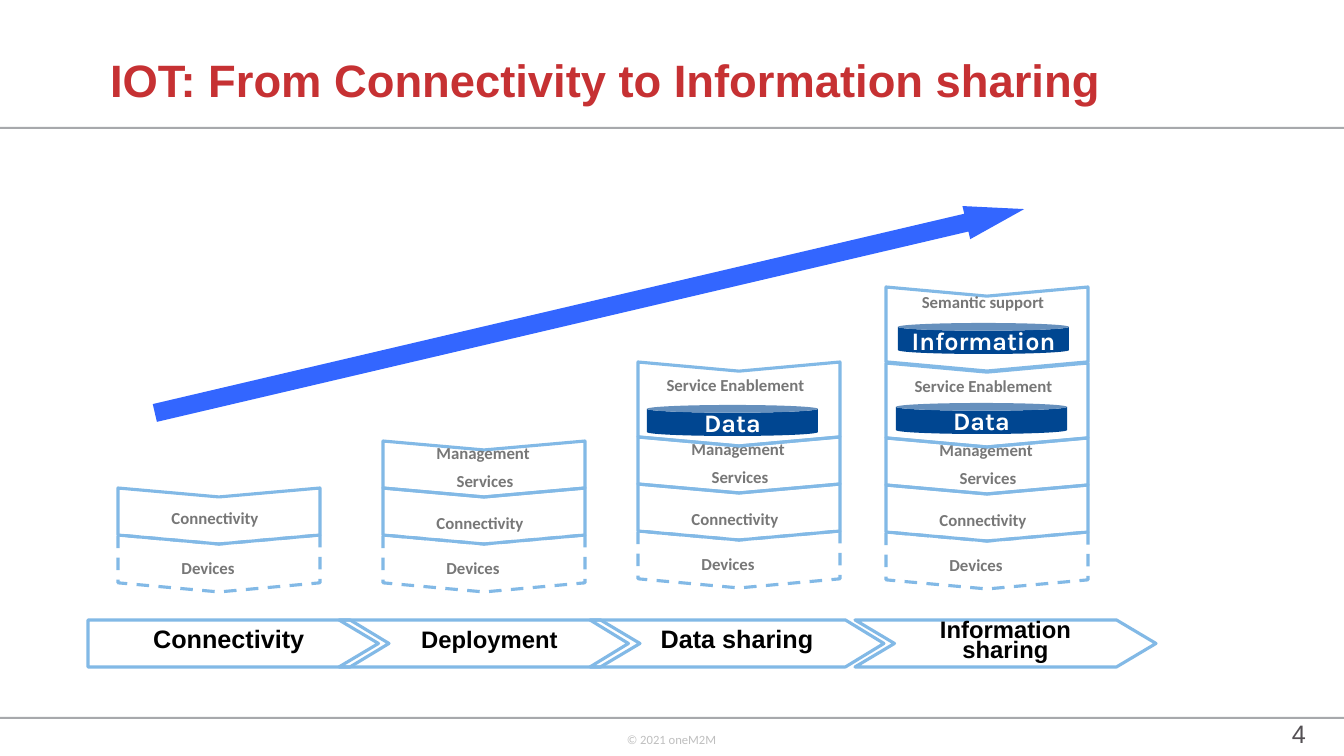
from dataclasses import dataclass

from pptx import Presentation
from pptx.dml.color import RGBColor
from pptx.enum.dml import MSO_LINE
from pptx.enum.shapes import MSO_SHAPE
from pptx.enum.text import MSO_ANCHOR, MSO_AUTO_SIZE, PP_ALIGN
from pptx.util import Emu, Pt

CHEVRON, PENTAGON = MSO_SHAPE.CHEVRON, MSO_SHAPE.PENTAGON
CAN, LEFT_ARROW, RECT = MSO_SHAPE.CAN, MSO_SHAPE.LEFT_ARROW, MSO_SHAPE.RECTANGLE
LEFT, CENTER = PP_ALIGN.LEFT, PP_ALIGN.CENTER
TOP, MIDDLE, BOTTOM = MSO_ANCHOR.TOP, MSO_ANCHOR.MIDDLE, MSO_ANCHOR.BOTTOM

# Content; every length is in px
SLIDE = (1344, 756)
TITLE = ("IOT: From Connectivity to Information sharing", (100, 39, 1022, 73))
RULES = [(0, 127, 1344, 2), (0, 717, 1344, 2)]
FOOTER = ("© 2021 oneM2M", (617, 727, 111, 40))
NUMBER = ("4", (1282, 713, 51, 40))
GROWTH_ARROW = (143, 294, 893, 34)

# Layers from the bottom up: lines, rise of the chevron above the base,
# chevron height, notch, label box relative to the stack's left and base
LAYERS = [
    (["Devices "], 0, 57, 0.16, (-33, 20, 250, 26)),
    (["Connectivity"], 47, 56, 0.16, (-1, -27, 196, 34)),
    (["Management ", "Services"], 94, 56, 0.16, (10, -84, 184, 32)),
    (["Service Enablement"], 169, 84, 0.109, (-27, -162, 249, 32)),
    (["Semantic support"], 245, 84, 0.109, (5, -246, 184, 32)),
]
STACK_W = 202
# Left, base, number of layers, shift of the Connectivity label
STACKS = [(118, 535, 2, -5), (383, 535, 3, 0), (638, 531, 4, 0), (886, 532, 5, 0)]
STORES = [("Data", 647, 405), ("Data", 896, 403), ("Information", 898, 323)]
STORE_SIZE = (171, 31)

# Text, preset, left, width, point, type size name
PHASES = [
    ("Connectivity", PENTAGON, 88, 301, 0.828, "phase"),
    ("Deployment", CHEVRON, 339, 301, 0.841, "phase_small"),
    ("Data sharing", CHEVRON, 590, 294, 0.82, "phase"),
    ("Information sharing", CHEVRON, 855, 301, 0.841, "phase_small"),
]
PHASE_TOP, PHASE_H = 620, 47


@dataclass(frozen=True)
class Theme:
    rule: str = "A7A9AC"
    outline: str = "82B9E6"
    arrow: str = "3366FF"
    store: str = "004691"
    line_width: float = 2.25
    # Font, size, colour, bold
    title: tuple = ("Arial", 32.4, "C63133", True)
    layer: tuple = ("Calibri", 12, "777777", True)
    data: tuple = ("Karla", 18, "FFFFFF", True)
    phase: tuple = ("Arial", 18, "000000", True)
    phase_small: tuple = ("Arial", 17, "000000", True)
    footer: tuple = ("Calibri", 9, "BFBFBF", False)
    number: tuple = ("Arial", 18, "545054", False)


THEME = Theme()
TIGHT = {"line_spacing": Pt(14), "space_after": Pt(3)}


def px(n):
    return Emu(round(n * 914400 / 100.8))


def write(sp, lines, style, align=CENTER, anchor=MIDDLE, wrap=True, **spacing):
    tf = sp.text_frame
    tf.auto_size = MSO_AUTO_SIZE.NONE
    tf.word_wrap, tf.vertical_anchor = wrap, anchor
    name, size, color, bold = getattr(THEME, style)
    for i, line in enumerate(lines):
        p = tf.add_paragraph() if i else tf.paragraphs[0]
        p.alignment = align
        for key, value in spacing.items():
            setattr(p, key, value)
        if i:
            p.space_before = Pt(3)
        r = p.add_run()
        r.text = line
        for key, value in {"name": name, "size": Pt(size), "bold": bold}.items():
            setattr(r.font, key, value)
        r.font.color.rgb = RGBColor.from_string(color)


def add_text(s, box, lines, style, **layout):
    write(s.shapes.add_textbox(*map(px, box)), lines, style, **layout)


def add_preset(s, preset, box, fill=None, adjust=(), rotation=0):
    """Add a filled shape, or an outlined one when no fill is given."""
    sp = s.shapes.add_shape(preset, *map(px, box))
    sp.shadow.inherit = False
    sp.rotation = rotation
    for i, value in enumerate(adjust):
        sp.adjustments[i] = value
    if fill:
        sp.fill.solid()
        sp.fill.fore_color.rgb = RGBColor.from_string(fill)
        sp.line.fill.background()
    else:
        sp.fill.background()
        sp.line.color.rgb = RGBColor.from_string(THEME.outline)
        sp.line.width = Pt(THEME.line_width)
    return sp


def add_stack(s, left, base, count, shift):
    for i, (lines, rise, h, notch, (dx, dy, w, label_h)) in enumerate(LAYERS[:count]):
        # A quarter turn about the centre swaps width and height
        turn = (STACK_W - h) / 2
        box = (left + turn, base - rise - turn, h, STACK_W)
        sp = add_preset(s, CHEVRON, box, adjust=[notch], rotation=90)
        if i == 0:
            sp.line.dash_style = MSO_LINE.DASH
        label = (left + dx, base + dy + (shift if i == 1 else 0), w, label_h)
        if i == 1:
            add_text(s, label, lines, "layer", anchor=TOP)
        else:
            add_text(s, label, lines, "layer", **TIGHT)


def main():
    prs = Presentation()
    prs.slide_width, prs.slide_height = map(px, SLIDE)
    s = prs.slides.add_slide(prs.slide_layouts[5])

    text, box = TITLE
    title = s.shapes.title
    title.left, title.top, title.width, title.height = map(px, box)
    write(title, [text], "title", align=LEFT, anchor=BOTTOM, line_spacing=0.9)

    for rule in RULES:
        add_preset(s, RECT, rule, THEME.rule)
    for (text, box), style in ((FOOTER, "footer"), (NUMBER, "number")):
        add_text(s, box, [text], style, align=LEFT, anchor=TOP)

    add_preset(s, LEFT_ARROW, GROWTH_ARROW, THEME.arrow, (0.537, 1.749), 166.8)
    for stack in STACKS:
        add_stack(s, *stack)
    for text, left, top in STORES:
        sp = add_preset(s, CAN, (left, top, *STORE_SIZE), THEME.store, [0.25])
        write(sp, [text], "data", wrap=False)
    for text, preset, left, w, point, style in PHASES:
        sp = add_preset(s, preset, (left, PHASE_TOP, w, PHASE_H), adjust=[point])
        write(sp, [text], style, **TIGHT)

    prs.save("out.pptx")


if __name__ == "__main__":
    main()
